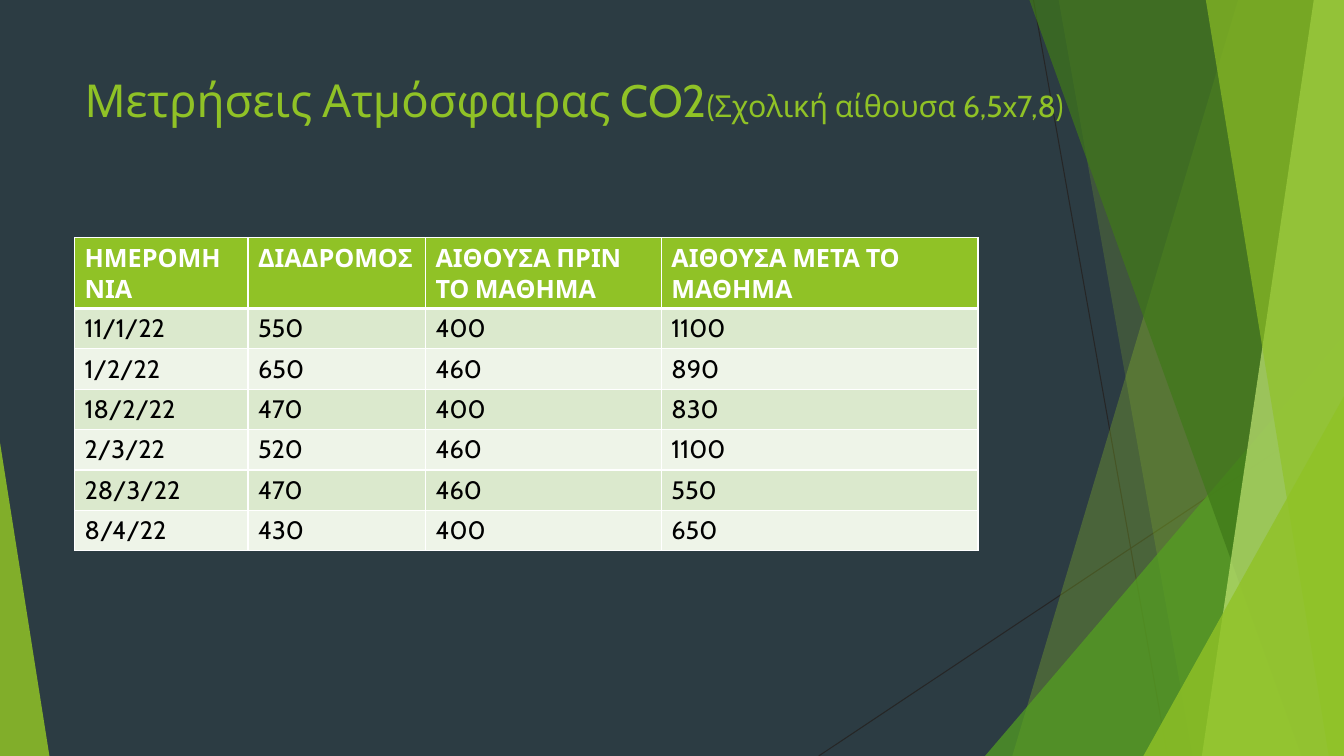
from lxml.etree import SubElement
from pptx import Presentation
from pptx.dml.color import RGBColor
from pptx.enum.shapes import MSO_CONNECTOR as Connector, MSO_SHAPE as Shape
from pptx.enum.text import MSO_ANCHOR as Anchor
from pptx.oxml import parse_xml
from pptx.oxml.ns import nsdecls, qn
from pptx.util import Inches, Pt

WIDTH, HEIGHT = 13.33, 7.5
COLORS = {
    "night": "2C3C43", "line": "262626", "lime": "90C226", "green": "54A021",
    "forest": "3F7819", "pale": "C0E474", "white": "FFFFFF", "black": "000000",
    "band_dark": "DBE9CD", "band_light": "EEF4E8",
}
PANELS_BACK = [(12.28, 10.04, "lime", 30), (10.5, 11.83, "lime", 20)]
PANELS_FRONT = [
    (10.21, 12.91, "forest", 70), (13.03, 11.92, "pale", 70), (11.96, 13.18, "lime", 65),
]
COLUMNS = [1.72, 1.76, 2.34, 3.14]
MEASUREMENTS = [
    ("ΗΜΕΡΟΜΗΝΙΑ", "ΔΙΑΔΡΟΜΟΣ", "ΑΙΘΟΥΣΑ ΠΡΙΝ ΤΟ ΜΑΘΗΜΑ", "ΑΙΘΟΥΣΑ ΜΕΤΑ ΤΟ ΜΑΘΗΜΑ"),
    ("11/1/22", "550", "400", "1100"),
    ("1/2/22", "650", "460", "890"),
    ("18/2/22", "470", "400", "830"),
    ("2/3/22", "520", "460", "1100"),
    ("28/3/22", "470", "460", "550"),
    ("8/4/22", "430", "400", "650"),
]


def rgb(name):
    return RGBColor.from_string(COLORS[name])


class SlideBuilder:
    font = "Cabin"

    def __init__(self, page):
        self.page = page
        page.background.fill.solid()
        page.background.fill.fore_color.rgb = rgb("night")

    def line(self, x1, y1, x2, y2):
        ends = [Inches(value) for value in (x1, y1, x2, y2)]
        connector = self.page.shapes.add_connector(Connector.STRAIGHT, *ends)
        connector.line.color.rgb = rgb("line")
        connector.line.width = Pt(0.75)
        SubElement(connector._element.spPr, qn("a:effectLst"))

    def paint(self, shape, color, opacity):
        shape.shadow.inherit = False
        shape.line.fill.background()
        shape.fill.solid()
        shape.fill.fore_color.rgb = rgb(color)
        solid = shape._element.spPr.find(qn("a:solidFill"))
        SubElement(solid[0], qn("a:alpha"), val=str(opacity * 1000))

    def panel(self, top_x, bottom_x, color, opacity):
        corners = [(WIDTH, 0), (WIDTH, HEIGHT), (bottom_x, HEIGHT)]
        outline = self.page.shapes.build_freeform(Inches(top_x), 0)
        outline.add_line_segments([(Inches(x), Inches(y)) for x, y in corners], close=True)
        self.paint(outline.convert_to_shape(), color, opacity)

    def triangle(self, left, top, width, apex, color, opacity):
        area = [Inches(value) for value in (left, top, width, HEIGHT - top)]
        shape = self.page.shapes.add_shape(Shape.ISOSCELES_TRIANGLE, *area)
        shape.adjustments[0] = apex
        self.paint(shape, color, opacity)

    def add_span(self, para, text, size, color, bold=False):
        span = para.add_run()
        span.text = text
        style = {"name": self.font, "size": Pt(size), "bold": bold}
        for key, value in style.items():
            setattr(span.font, key, value)
        span.font.color.rgb = rgb(color)

    def title(self, left, top, width, height, spans):
        area = [Inches(value) for value in (left, top, width, height)]
        frame = self.page.shapes.add_textbox(*area).text_frame
        layout = {"word_wrap": True, "vertical_anchor": Anchor.TOP}
        for key, value in layout.items():
            setattr(frame, key, value)
        for text, size in spans:
            self.add_span(frame.paragraphs[0], text, size, "lime")

    def border(self, cell, widths):
        properties = cell._tc.get_or_add_tcPr()
        for index, (side, points) in enumerate(widths.items()):
            properties.insert(index, parse_xml(
                f'<a:ln{side} {nsdecls("a")} w="{Pt(points)}"><a:solidFill>'
                f'<a:srgbClr val="{COLORS["white"]}"/></a:solidFill></a:ln{side}>'))

    def table(self, left, top, columns, row_height, rows):
        area = [Inches(value) for value in (left, top, sum(columns), row_height * len(rows))]
        grid = self.page.shapes.add_table(len(rows), len(columns), *area).table
        for column, width in zip(grid.columns, columns):
            column.width = Inches(width)
        for row_index, row in enumerate(rows):
            header = row_index == 0
            fill = "lime" if header else ("band_light", "band_dark")[row_index % 2]
            widths = {"L": 1, "R": 1, "T": 3 if row_index == 1 else 1, "B": 3 if header else 1}
            for column_index, text in enumerate(row):
                cell = grid.cell(row_index, column_index)
                cell.fill.solid()
                cell.fill.fore_color.rgb = rgb(fill)
                self.border(cell, widths)
                color = "white" if header else "black"
                self.add_span(cell.text_frame.paragraphs[0], text, 18, color, header)


def main():
    deck = Presentation()
    deck.slide_width, deck.slide_height = Inches(WIDTH), Inches(HEIGHT)
    builder = SlideBuilder(deck.slides.add_slide(deck.slide_layouts[6]))

    builder.line(10.25, 0, 11.58, HEIGHT)
    builder.line(WIDTH, 4.03, 8.12, HEIGHT)
    for panel in PANELS_BACK:
        builder.panel(*panel)
    builder.triangle(9.77, 3.33, 3.56, 1, "green", 72)
    for panel in PANELS_FRONT:
        builder.panel(*panel)
    builder.triangle(11.34, 3.93, 1.99, 1, "lime", 80)
    builder.triangle(0, 4.39, 0.49, 0, "lime", 85)

    builder.title(0.74, 0.67, 10.04, 1.34, [
        ("Μετρήσεις Ατμόσφαιρας CO2", 32.4), ("(Σχολική αίθουσα 6,5x7,8)", 21.6),
    ])
    builder.table(0.74, 2.36, COLUMNS, 0.34, MEASUREMENTS)
    deck.save("out.pptx")


if __name__ == "__main__":
    main()
